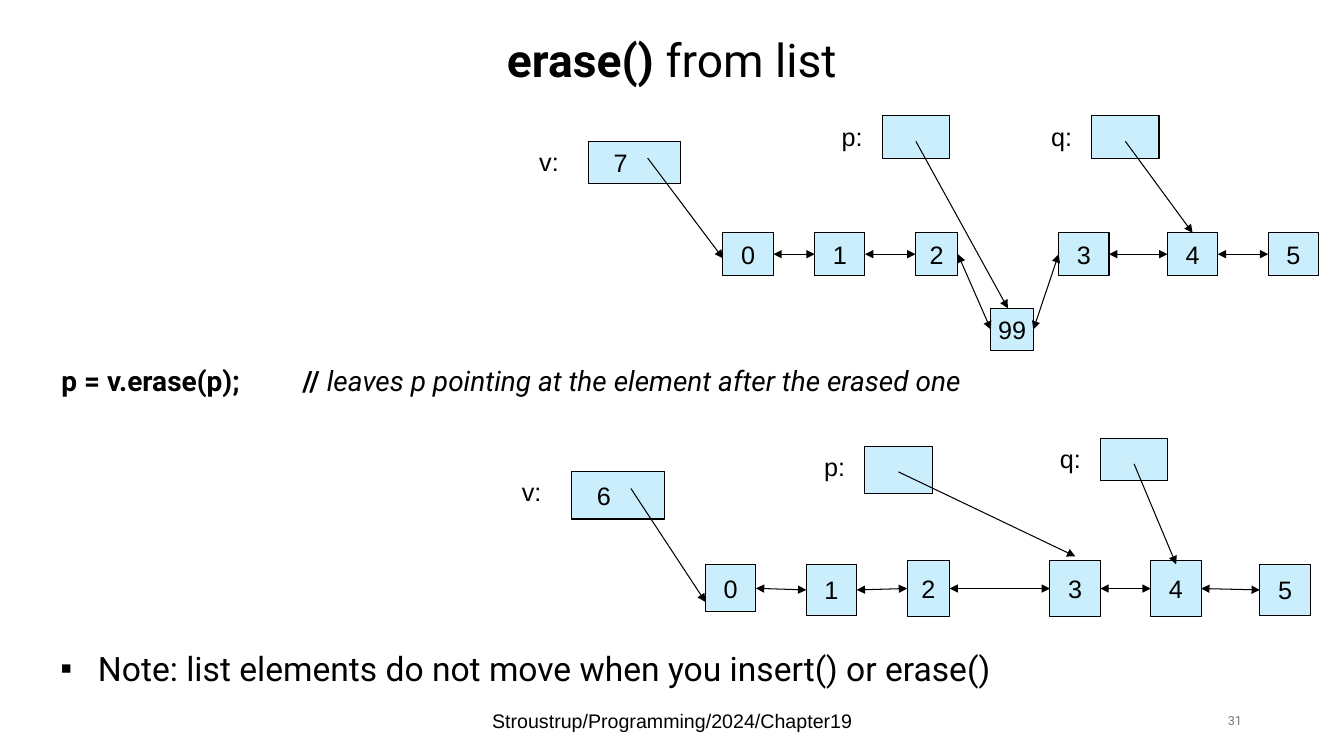
import dataclasses

import lxml.etree
import pptx
import pptx.dml.color
import pptx.enum.shapes
import pptx.enum.text
import pptx.oxml.ns
import pptx.util

Cm = pptx.util.Cm
Pt = pptx.util.Pt
RGB = pptx.dml.color.RGBColor
ALIGN = pptx.enum.text.PP_ALIGN
ANCHOR = pptx.enum.text.MSO_ANCHOR
qn = pptx.oxml.ns.qn


@dataclasses.dataclass(frozen=True)
class Theme:
    ink: RGB = RGB(0, 0, 0)
    muted: RGB = RGB(0x79, 0x79, 0x79)
    box: RGB = RGB(0xCA, 0xEE, 0xFB)
    head_font: str = "Roboto"
    font: str = "Arial"
    title: int = 33
    note: int = 24
    code: int = 20
    label: int = 18
    footer: int = 14
    number: int = 9
    line: float = 0.75


THEME = Theme()

BEFORE = dict(
    holder=("7", 1.48, 0.64, 1.07),
    nodes=[
        ("0", 4.88, 2.95, 1.27, 1.07),
        ("1", 7.19, 2.95, 1.27, 1.07),
        ("2", 9.73, 2.95, 1.07, 1.07),
        ("99", 11.63, 4.85, 1.07, 1.07),
        ("3", 13.34, 2.95, 1.27, 1.07),
        ("4", 16.08, 2.95, 1.27, 1.07),
        ("5", 18.62, 2.95, 1.27, 1.07),
    ],
    first=(0, 0.64),
    pointers=[
        ("p:", 7.62, 0, 1.07, "99", (0.43, 0)),
        ("q:", 12.9, 0, 1.07, "4", None),
    ],
)

AFTER = dict(
    holder=("6", 1.5, 0.84, 1.19),
    nodes=[
        ("0", 4.88, 3.18, 1.27, 1.19),
        ("1", 7.42, 3.18, 1.27, 1.27),
        ("2", 9.96, 3.07, 1.07, 1.42),
        ("3", 13.56, 3.07, 1.27, 1.42),
        ("4", 16.1, 3.07, 1.27, 1.42),
        ("5", 18.85, 3.18, 1.27, 1.27),
    ],
    first=(0, 0.94),
    pointers=[
        ("p:", 7.62, 0.2, 1.19, "3", (0.64, -0.1)),
        ("q:", 13.56, 0, 1.07, "4", (0.64, 0.1)),
    ],
)


def write(tf, *runs, size=THEME.label, font=THEME.font, color=THEME.ink,
          align=ALIGN.LEFT, anchor=ANCHOR.TOP, wrap=True, spacing=None,
          bullet=None, tab=None):
    tf.word_wrap = wrap
    tf.vertical_anchor = anchor
    p = tf.paragraphs[0]
    p.alignment = align
    if spacing:
        p.line_spacing = spacing
    pPr = p._p.get_or_add_pPr()
    if bullet:
        pPr.set("marL", str(Cm(0.95)))
        pPr.set("indent", str(-Cm(0.95)))
        lxml.etree.SubElement(pPr, qn("a:buFont"), typeface=THEME.font)
        lxml.etree.SubElement(pPr, qn("a:buChar"), char=bullet)
    if tab:
        tabs = lxml.etree.SubElement(pPr, qn("a:tabLst"))
        lxml.etree.SubElement(tabs, qn("a:tab"), pos=str(Cm(tab)), algn="l")
    for text, bold, italic in runs:
        r = p.add_run()
        r.text = text
        r.font.name = font
        r.font.size = Pt(size)
        r.font.bold = bold
        r.font.italic = italic
        r.font.color.rgb = color


def add_text(s, x, y, w, h, *runs, **fmt):
    sp = s.shapes.add_textbox(Cm(x), Cm(y), Cm(w), Cm(h))
    write(sp.text_frame, *runs, **fmt)


def add_box(s, x, y, w, h, text="", shift=0):
    sp = s.shapes.add_shape(pptx.enum.shapes.MSO_SHAPE.RECTANGLE,
                            Cm(x), Cm(y), Cm(w), Cm(h))
    sp.shadow.inherit = False
    sp.fill.solid()
    sp.fill.fore_color.rgb = THEME.box
    sp.line.color.rgb = THEME.ink
    sp.line.width = Pt(THEME.line)
    if text:
        sp.text_frame.margin_right = Cm(0.25 + 2 * shift)
        write(sp.text_frame, (text, False, False), align=ALIGN.CENTER,
              anchor=ANCHOR.MIDDLE, wrap=False)
    return sp


def add_arrow(s, x1=0, y1=0, x2=0, y2=0, begin=None, end=None):
    c = s.shapes.add_connector(pptx.enum.shapes.MSO_CONNECTOR.STRAIGHT,
                               Cm(x1), Cm(y1), Cm(x2), Cm(y2))
    if begin:
        c.begin_connect(*begin)
    if end:
        c.end_connect(*end)
    c.line.color.rgb = THEME.ink
    c.line.width = Pt(THEME.line)
    ln = c.line._get_or_add_ln()
    if begin:
        lxml.etree.SubElement(ln, qn("a:headEnd"), type="triangle")
    lxml.etree.SubElement(ln, qn("a:tailEnd"), type="triangle")
    lxml.etree.SubElement(c._element.spPr, qn("a:effectLst"))


def add_list_diagram(s, left, top, holder, nodes, first, pointers):
    count, hx, hy, hh = holder
    hx, hy = left + hx, top + hy
    add_text(s, left, hy, 1.48, 1.02, ("v:", False, False))
    add_box(s, hx, hy, 2.34, hh, count, shift=0.35)

    boxes, places = {}, {}
    for name, x, y, w, h in nodes:
        places[name] = left + x, top + y
        boxes[name] = add_box(s, left + x, top + y, w, h, name)
    chain = list(boxes.values())
    for a, b in zip(chain, chain[1:]):
        add_arrow(s, begin=(a, 3), end=(b, 1))

    x, y = places["0"]
    add_arrow(s, hx + 1.5, hy + 0.42, x + first[0], y + first[1])

    for label, px, py, ph, target, offset in pointers:
        px, py = left + px, top + py
        add_text(s, px, py, 1.27, 1.02, (label, False, False))
        add_box(s, px + 1.27, py, 1.7, ph)
        start = px + 2.12, py + 0.64
        if offset:
            x, y = places[target]
            add_arrow(s, *start, x + offset[0], y + offset[1])
        else:
            add_arrow(s, *start, end=(boxes[target], 0))


def add_title(s, x, y, w, h):
    sp = s.shapes.title
    sp.left, sp.top, sp.width, sp.height = Cm(x), Cm(y), Cm(w), Cm(h)
    write(sp.text_frame, ("erase() ", True, False), ("from list", False, False),
          size=THEME.title, font=THEME.head_font, align=ALIGN.CENTER,
          anchor=ANCHOR.MIDDLE, spacing=0.9)


def add_footer(s, y, h):
    add_text(s, 11.23, y, 11.43, h,
             ("Stroustrup/Programming/2024/Chapter19", False, False),
             size=THEME.footer, align=ALIGN.CENTER, anchor=ANCHOR.MIDDLE)
    add_text(s, 23.93, y, 7.62, h, ("31", False, False), size=THEME.number,
             font=THEME.head_font, color=THEME.muted, align=ALIGN.RIGHT,
             anchor=ANCHOR.MIDDLE)


def main():
    prs = pptx.Presentation()
    prs.slide_width, prs.slide_height = Cm(33.87), Cm(19.05)
    s = prs.slides.add_slide(prs.slide_layouts[5])
    add_title(s, 5.5, 0, 22.86, 3.17)
    add_list_diagram(s, 13.34, 2.92, **BEFORE)
    add_text(s, 1.3, 9.12, 28.37, 1.47, ("p = v.erase(p);\t// ", True, False),
             ("leaves p pointing at the element after the erased one", False, True),
             size=THEME.code, font=THEME.head_font, spacing=0.9, tab=6.07)
    add_list_diagram(s, 12.9, 11.05, **AFTER)
    add_text(s, 1.27, 16.31, 27.74, 1.07,
             ("Note: list elements do not move when you insert() or erase()", False, False),
             size=THEME.note, font=THEME.head_font, spacing=0.9, bullet="▪")
    add_footer(s, 17.65, 1.02)
    prs.save("out.pptx")


if __name__ == "__main__":
    main()
